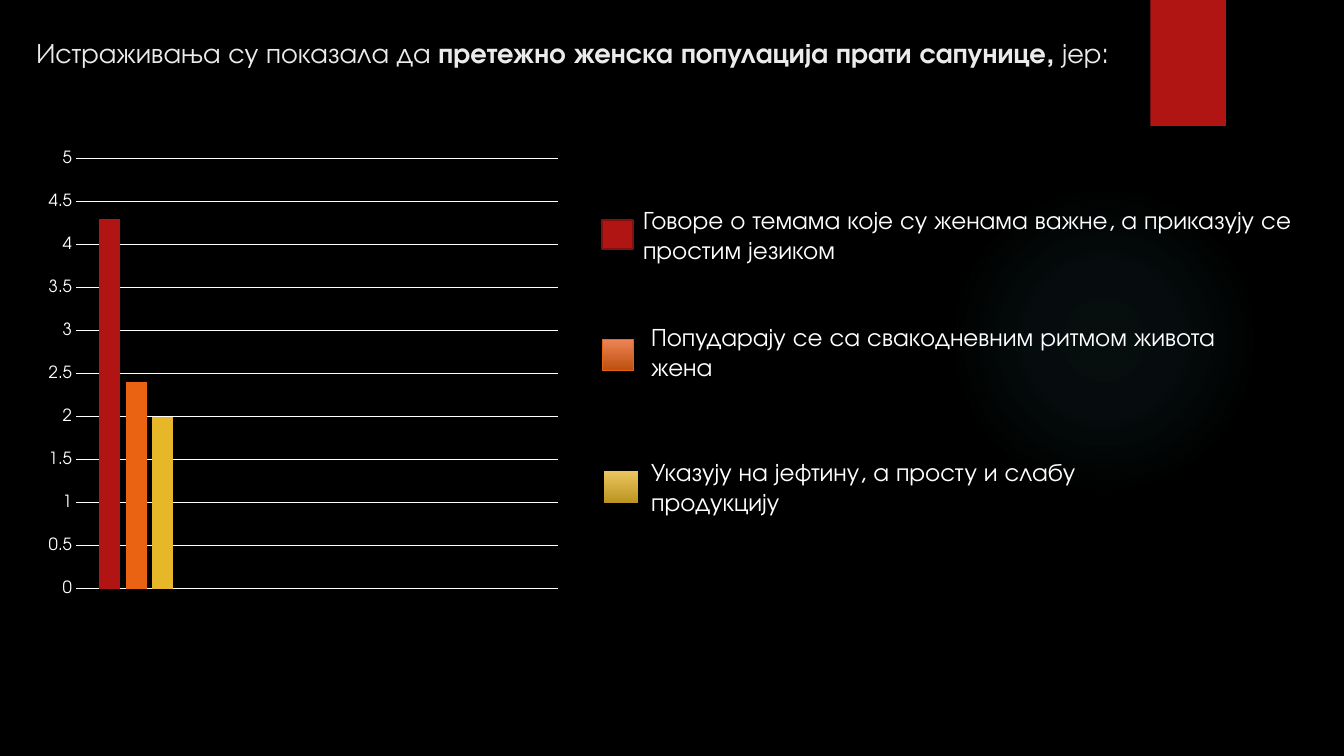
from lxml import etree
from pptx import Presentation
from pptx.chart import data
from pptx.dml.color import RGBColor
from pptx.enum import chart as ch, shapes, text
from pptx.oxml import parse_xml
from pptx.oxml.ns import qn
from pptx.util import Inches, Pt

FONT = "TeX Gyre Adventor"
BLACK = RGBColor(0, 0, 0)
WHITE = RGBColor(0xFF, 0xFF, 0xFF)
PALE = RGBColor(0xEB, 0xEB, 0xEB)
RED = RGBColor(0xB0, 0x15, 0x13)
MAROON = RGBColor(0x82, 0x10, 0x0E)
ORANGE = RGBColor(0xEA, 0x63, 0x12)
PEACH = RGBColor(0xEE, 0x84, 0x55)
RUST = RGBColor(0xBC, 0x4F, 0x0E)
GOLD = RGBColor(0xE6, 0xB7, 0x29)
SAND = RGBColor(0xEB, 0xC6, 0x5F)
OCHRE = RGBColor(0xBB, 0x94, 0x1F)
TEAL = RGBColor(0x50, 0xB9, 0xC1)

TITLE = [
    ("Истраживања су показала да ", False),
    ("претежно женска популација прати сапунице, ", True),
    ("јер:", False),
]
BARS = [("Series 1", 4.3, RED), ("Series 2", 2.4, ORANGE), ("Series 3", 2, GOLD)]
KEYS = [
    ((5.97, 2.18, 0.31, 0.29), [RED], (MAROON, 1.5)),
    ((5.98, 3.37, 0.3, 0.31), [PEACH, RUST], (ORANGE, 0.75)),
    ((5.99, 4.67, 0.34, 0.32), [SAND, OCHRE], None),
]
NOTES = [
    ((6.28, 1.98, 6.93, 0.71),
     "Говоре о темама које су женама важне, а приказују се простим језиком"),
    ((6.36, 3.14, 6.11, 0.71), "Попударају се са свакодневним ритмом живота жена"),
    ((6.36, 4.48, 5.33, 0.71), "Указују на јефтину, а просту и слабу продукцију"),
]


def place(box):
    return [Inches(v) for v in box]


def style(font, size, color, bold=False):
    font.name, font.size, font.bold = FONT, Pt(size), bold
    font.color.rgb = color


def add_run(para, words, size, color, bold=False):
    run = para.add_run()
    run.text = words
    style(run.font, size, color, bold)


def add_rect(slide, box, fills, line=None):
    rect = slide.shapes.add_shape(shapes.MSO_SHAPE.RECTANGLE, *place(box))
    rect.shadow.inherit = False
    if len(fills) == 1:
        rect.fill.solid()
        rect.fill.fore_color.rgb = fills[0]
    else:
        rect.fill.gradient()
        rect.fill.gradient_angle = 270
        for stop, color in zip(rect.fill.gradient_stops, fills):
            stop.color.rgb = color
    if line:
        rect.line.color.rgb, rect.line.width = line[0], Pt(line[1])
    else:
        rect.line.fill.background()


def add_glow(slide, box):
    glow = slide.shapes.add_shape(shapes.MSO_SHAPE.OVAL, *place(box))
    stops = "".join(
        f'<a:gs pos="{pos * 1000}"><a:srgbClr val="{TEAL}">'
        f'<a:alpha val="{alpha * 1000}"/></a:srgbClr></a:gs>'
        for pos, alpha in [(0, 7), (36, 6), (69, 0)])
    glow._element.spPr.append(parse_xml(
        '<a:gradFill xmlns:a="http://schemas.openxmlformats.org/drawingml/2006/main">'
        f'<a:gsLst>{stops}</a:gsLst><a:path path="circle">'
        '<a:fillToRect l="50000" t="50000" r="50000" b="50000"/></a:path></a:gradFill>'))
    glow.line.fill.background()
    glow.shadow.inherit = False


def add_title(slide):
    title = slide.shapes.title
    title.left, title.top, title.width, title.height = place((0.26, 0.3, 11.55, 1.53))
    frame = title.text_frame
    frame.vertical_anchor = text.MSO_ANCHOR.TOP
    para = frame.paragraphs[0]
    para.alignment = text.PP_ALIGN.LEFT
    for words, bold in TITLE:
        add_run(para, words, 20, PALE, bold)


def add_note(slide, box, words):
    frame = slide.shapes.add_textbox(*place(box)).text_frame
    frame.word_wrap = True
    add_run(frame.paragraphs[0], words, 18, WHITE)


def set_plot(chart, box):
    area = chart._chartSpace.chart.plotArea
    for old in area.findall(qn("c:layout")):
        area.remove(old)
    layout = etree.Element(qn("c:layout"))
    area.insert(0, layout)
    manual = etree.SubElement(layout, qn("c:manualLayout"))
    parts = [("layoutTarget", "inner"), ("xMode", "edge"), ("yMode", "edge")]
    for tag, val in parts + list(zip("xywh", box)):
        etree.SubElement(manual, qn("c:" + tag)).set("val", str(val))


def add_bars(slide, box):
    table = data.CategoryChartData()
    table.categories = ["1", "", "", ""]
    for name, value, _ in BARS:
        table.add_series(name, [value, None, None, None])
    kind = ch.XL_CHART_TYPE.COLUMN_CLUSTERED
    chart = slide.shapes.add_chart(kind, *place(box), table).chart
    chart.has_title = chart.has_legend = False
    style(chart.font, 10, WHITE)
    set_plot(chart, (0.09, 0.04, 0.89, 0.93))
    plot = chart.plots[0]
    plot.gap_width, plot.overlap, plot.vary_by_categories = 219, -27, False
    for series, (_, _, color) in zip(plot.series, BARS):
        series.format.fill.solid()
        series.format.fill.fore_color.rgb = color
    chart.category_axis.visible = False
    axis = chart.value_axis
    axis.minimum_scale, axis.maximum_scale, axis.major_unit = 0, 5, 0.5
    axis.major_tick_mark = ch.XL_TICK_MARK.NONE
    axis.format.line.fill.background()
    style(axis.tick_labels.font, 12, WHITE)
    grid = axis.major_gridlines.format.line
    grid.color.rgb, grid.width = WHITE, Pt(0.75)


def main():
    deck = Presentation()
    deck.slide_width, deck.slide_height = Inches(13.33), Inches(7.5)
    slide = deck.slides.add_slide(deck.slide_layouts[5])
    slide.background.fill.solid()
    slide.background.fill.fore_color.rgb = BLACK
    add_glow(slide, (9.41, 1.83, 3.08, 3.08))
    add_rect(slide, (11.41, 0, 0.75, 1.25), [RED])
    add_title(slide)
    add_bars(slide, (0.27, 1.39, 5.37, 4.59))
    for key in KEYS:
        add_rect(slide, *key)
    for note in NOTES:
        add_note(slide, *note)
    deck.save("out.pptx")


if __name__ == "__main__":
    main()
